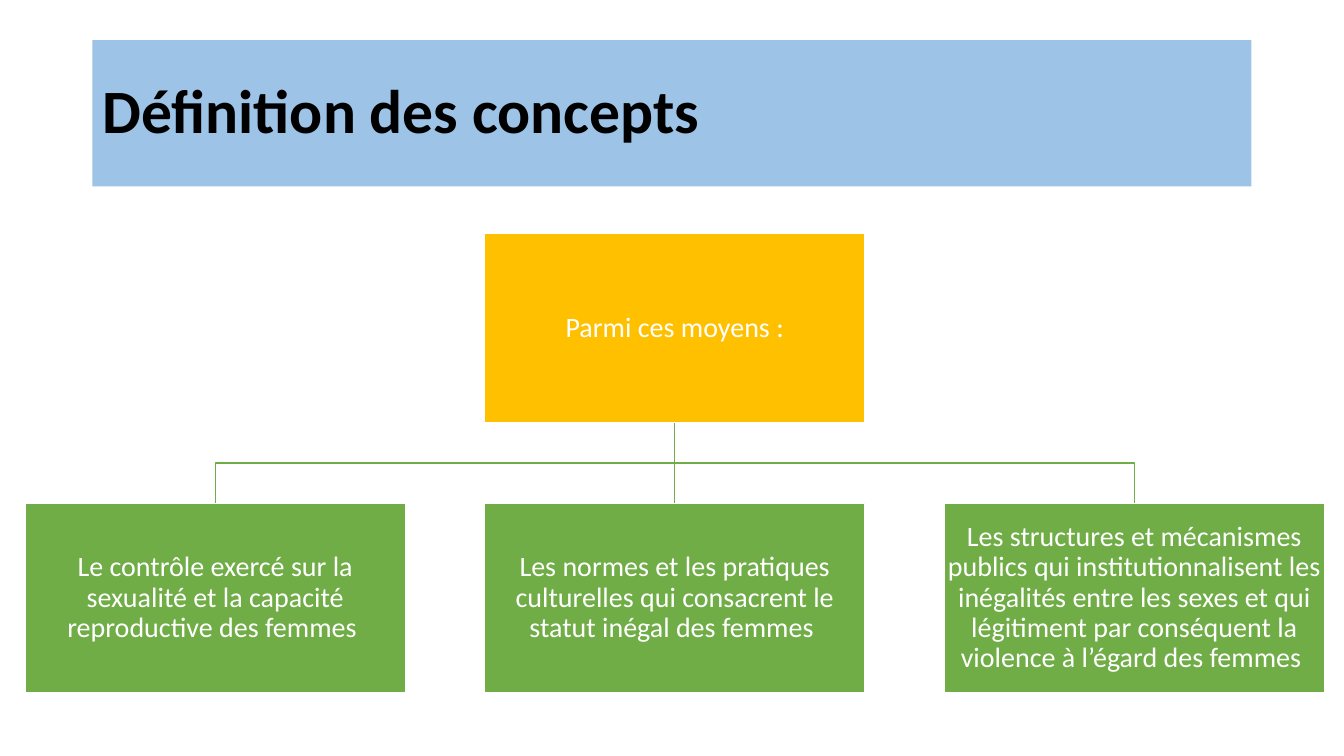
from pptx import Presentation
from pptx.dml.color import RGBColor
from pptx.enum.shapes import MSO_CONNECTOR as Connector, MSO_SHAPE as Shape
from pptx.enum.text import MSO_ANCHOR as Anchor, PP_ALIGN as Align
from pptx.oxml.ns import qn
from pptx.util import Pt
from lxml.etree import SubElement

GREEN, AMBER, WHITE = "70AD47", "FFC000", "FFFFFF"
HEADING = "Parmi ces moyens :"
MEANS = [
    "Le contrôle exercé sur la sexualité et la capacité reproductive des femmes ",
    "Les normes et les pratiques culturelles qui consacrent le statut inégal des femmes ",
    "Les structures et mécanismes publics qui institutionnalisent les inégalités "
    "entre les sexes et qui légitiment par conséquent la violence à l’égard des femmes ",
]


def color(hex_code):
    return RGBColor.from_string(hex_code)


def add_panel(slide, box, text, fill, text_color, size):
    """Add a filled rectangle with one vertically centred paragraph."""
    panel = slide.shapes.add_shape(Shape.RECTANGLE, *(Pt(v) for v in box))
    panel.shadow.inherit = False
    panel.fill.solid()
    panel.fill.fore_color.rgb = color(fill)
    panel.line.fill.background()
    frame = panel.text_frame
    frame.word_wrap = True
    frame.vertical_anchor = Anchor.MIDDLE
    frame.text = text
    paragraph = frame.paragraphs[0]
    paragraph.line_spacing = 0.9
    font = paragraph.runs[0].font
    font.name, font.size = "Calibri", Pt(size)
    font.color.rgb = color(text_color)
    return panel


def add_title(slide, box, text):
    title = add_panel(slide, box, text, "9DC3E6", "000000", 44)
    paragraph = title.text_frame.paragraphs[0]
    paragraph.alignment = Align.LEFT
    paragraph.runs[0].font.bold = True


def add_node(slide, box, text, fill):
    node = add_panel(slide, box, text, fill, WHITE, 20)
    node.line.color.rgb = color(WHITE)
    node.line.width = Pt(1)
    frame = node.text_frame
    frame.margin_left = frame.margin_right = Pt(1)
    frame.margin_top = frame.margin_bottom = Pt(1)
    frame.paragraphs[0].alignment = Align.CENTER


def add_branch(slide, start_x, start_y, end_x, end_y):
    """Join a parent to a child, bending halfway down when they are not aligned."""
    if start_x == end_x:
        branch = slide.shapes.add_connector(
            Connector.STRAIGHT, Pt(start_x), Pt(start_y), Pt(end_x), Pt(end_y))
        SubElement(branch._element.spPr, qn("a:effectLst"))
    else:
        middle_y = (start_y + end_y) / 2
        builder = slide.shapes.build_freeform(Pt(start_x), Pt(start_y))
        corners = [(start_x, middle_y), (end_x, middle_y), (end_x, end_y)]
        builder.add_line_segments([(Pt(x), Pt(y)) for x, y in corners], close=False)
        branch = builder.convert_to_shape()
        branch.shadow.inherit = False
        branch.fill.background()
    branch.line.color.rgb = color(GREEN)
    branch.line.width = Pt(1)


def add_hierarchy(slide, box, heading, children):
    left, top, width, height = box
    node_width, node_height = 271.5, 135.5
    pitch = (width - node_width) / (len(children) - 1)
    center = left + width / 2
    child_top = top + height - node_height
    child_lefts = [left + i * pitch for i in range(len(children))]
    for child_left in child_lefts:
        add_branch(slide, center, top + node_height,
                   child_left + node_width / 2, child_top)
    add_node(slide, (center - node_width / 2, top, node_width, node_height),
             heading, AMBER)
    for child_left, text in zip(child_lefts, children):
        add_node(slide, (child_left, child_top, node_width, node_height), text, GREEN)


def main():
    deck = Presentation()
    deck.slide_width, deck.slide_height = Pt(960), Pt(540)
    slide = deck.slides.add_slide(deck.slide_layouts[6])
    add_title(slide, (66, 28.75, 828, 104.4), "Définition des concepts")
    add_hierarchy(slide, (18, 166.5, 928, 328.5), HEADING, MEANS)
    deck.save("out.pptx")


if __name__ == "__main__":
    main()
